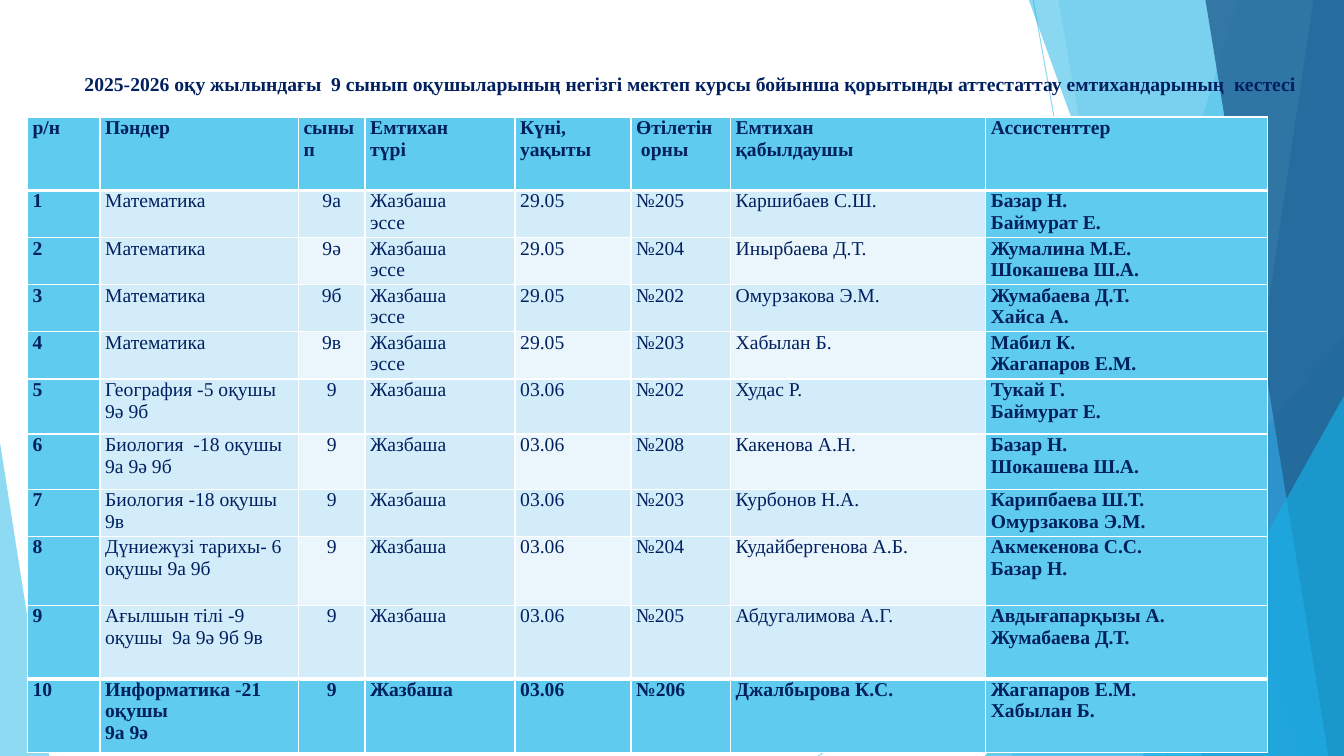
from lxml import etree
from pptx import Presentation
from pptx.dml.color import RGBColor
from pptx.enum import shapes, text
from pptx.oxml.ns import qn
from pptx.util import Cm, Pt

WHITE = RGBColor(0xFF, 0xFF, 0xFF)
NAVY = RGBColor(0x00, 0x20, 0x60)
SKY = RGBColor(0x5F, 0xCB, 0xEF)
CYAN = RGBColor(0x17, 0xB0, 0xE4)
BLUE = RGBColor(0x2E, 0x83, 0xC3)
DEEP = RGBColor(0x22, 0x62, 0x92)
PALE = RGBColor(0xD2, 0xEC, 0xF9)
PALER = RGBColor(0xEA, 0xF6, 0xFC)

FONT = "Times New Roman"
WIDTH, HEIGHT = 33.87, 19.05
TITLE = ("2025-2026 оқу жылындағы  9 сынып оқушыларының негізгі мектеп курсы "
         "бойынша қорытынды аттестаттау емтихандарының  кестесі")
COLUMNS = [1.83, 5, 1.68, 3.78, 2.92, 2.51, 6.43, 7.11]
ROWS = [1.85] + [1.15] * 4 + [1.39] * 2 + [1.15, 1.74, 1.85, 1.85]
HEADER = ("р/н", "Пәндер", "сынып", "Емтихан\nтүрі", "Күні, уақыты",
          "Өтілетін\n орны", "Емтихан\nқабылдаушы", "Ассистенттер")
ESSAY = "Жазбаша\nэссе"
WRITTEN = "Жазбаша"
EXAMS = [
    ("Математика", "9а", ESSAY, "29.05", "№205", "Каршибаев С.Ш.",
     "Базар Н.\nБаймурат Е."),
    ("Математика", "9ә", ESSAY, "29.05", "№204", "Инырбаева Д.Т.",
     "Жумалина М.Е.\nШокашева Ш.А."),
    ("Математика", "9б", ESSAY, "29.05", "№202", "Омурзакова Э.М.",
     "Жумабаева Д.Т.\nХайса А."),
    ("Математика", "9в", ESSAY, "29.05", "№203", "Хабылан Б.",
     "Мабил К.\nЖагапаров Е.М."),
    ("География -5 оқушы\n9ә 9б", "9", WRITTEN, "03.06", "№202", "Худас Р.",
     "Тукай Г.\nБаймурат Е."),
    ("Биология  -18 оқушы\n9а 9ә 9б", "9", WRITTEN, "03.06", "№208",
     "Какенова А.Н.", "Базар Н.\nШокашева Ш.А."),
    ("Биология -18 оқушы 9в", "9", WRITTEN, "03.06", "№203", "Курбонов Н.А.",
     "Карипбаева Ш.Т.\nОмурзакова Э.М."),
    ("Дүниежүзі тарихы- 6 оқушы 9а 9б", "9", WRITTEN, "03.06", "№204",
     "Кудайбергенова А.Б.", "Акмекенова С.С.\nБазар Н."),
    ("Ағылшын тілі -9 оқушы  9а 9ә 9б 9в", "9", WRITTEN, "03.06", "№205",
     "Абдугалимова А.Г.", "Авдығапарқызы А.\nЖумабаева Д.Т."),
    ("Информатика -21 оқушы\n9а 9ә", "9", WRITTEN, "03.06", "№206",
     "Джалбырова К.С.", "Жагапаров Е.М.\nХабылан Б."),
]


def write(tf, content, size=14, bold=False, color=NAVY, align=text.PP_ALIGN.LEFT):
    """Write each line of content as a formatted paragraph."""
    for i, line in enumerate(content.split("\n")):
        p = tf.add_paragraph() if i else tf.paragraphs[0]
        p.alignment = align
        r = p.add_run()
        r.text = line
        r.font.name, r.font.size, r.font.bold = FONT, Pt(size), bold
        r.font.color.rgb = color


def set_opacity(element, percent):
    """Make every RGB colour inside the element partly transparent."""
    for color in list(element.iter(qn("a:srgbClr"))):
        etree.SubElement(color, qn("a:alpha"), val=str(percent * 1000))


def paint(sp, color, opacity):
    """Give a shape a translucent fill with no outline or shadow."""
    sp.shadow.inherit = False
    sp.fill.solid()
    sp.fill.fore_color.rgb = color
    sp.line.fill.background()
    set_opacity(sp.fill._xPr, opacity)


def add_ray(slide, x1, y1, x2, y2):
    """Draw a thin translucent line."""
    line = slide.shapes.add_connector(
        shapes.MSO_CONNECTOR.STRAIGHT, Cm(x1), Cm(y1), Cm(x2), Cm(y2))
    line.line.color.rgb = SKY
    line.line.width = Pt(0.75)
    sp_pr = line._element.spPr
    set_opacity(sp_pr, 70)
    etree.SubElement(sp_pr, qn("a:effectLst"))


def add_facet(slide, top_x, bottom_x, color, opacity):
    """Fill the area between a slanted edge and the right side of the slide."""
    builder = slide.shapes.build_freeform(Cm(top_x), 0)
    builder.add_line_segments([(Cm(WIDTH), 0), (Cm(WIDTH), Cm(HEIGHT)),
                               (Cm(bottom_x), Cm(HEIGHT))])
    paint(builder.convert_to_shape(), color, opacity)


def add_triangle(slide, x, y, w, apex, color, opacity):
    """Draw a triangle standing on the bottom edge of the slide."""
    sp = slide.shapes.add_shape(shapes.MSO_SHAPE.ISOSCELES_TRIANGLE,
                                Cm(x), Cm(y), Cm(w), Cm(HEIGHT - y))
    sp.adjustments[0] = apex
    paint(sp, color, opacity)


def add_title(slide):
    """Add the heading above the table."""
    tf = slide.shapes.add_textbox(Cm(1.88), Cm(1.7), Cm(31.29), Cm(3.66)).text_frame
    tf.word_wrap = True
    write(tf, TITLE, bold=True)


def set_borders(cell, top, bottom):
    """Draw white cell borders with the given top and bottom widths."""
    for side, width in (("L", 1), ("R", 1), ("T", top), ("B", bottom)):
        ln = etree.SubElement(cell._tc.get_or_add_tcPr(), qn(f"a:ln{side}"),
                              w=str(Pt(width)))
        fill = etree.SubElement(ln, qn("a:solidFill"))
        etree.SubElement(fill, qn("a:srgbClr"), val=str(WHITE))


def add_schedule(slide):
    """Add the exam table."""
    records = [HEADER] + [(str(n), *exam) for n, exam in enumerate(EXAMS, 1)]
    last_row, last_col = len(ROWS) - 1, len(COLUMNS) - 1
    table = slide.shapes.add_table(
        len(ROWS), len(COLUMNS), Cm(0.69), Cm(2.95),
        Cm(sum(COLUMNS)), Cm(sum(ROWS))).table
    table.horz_banding = False
    for column, width in zip(table.columns, COLUMNS):
        column.width = Cm(width)
    for i, (row, height, record) in enumerate(zip(table.rows, ROWS, records)):
        row.height = Cm(height)
        for j, (cell, content) in enumerate(zip(row.cells, record)):
            strong = i in (0, last_row) or j in (0, last_col)
            pale = PALER if i % 2 == 0 and j % 2 == 0 else PALE
            set_borders(cell, top=3 if i in (1, last_row) else 1,
                        bottom=3 if i in (0, last_row - 1) else 1)
            cell.fill.solid()
            cell.fill.fore_color.rgb = SKY if strong else pale
            cell.margin_left = cell.margin_right = Cm(0.13)
            cell.margin_top = cell.margin_bottom = 0
            centred = i > 0 and j == 2
            write(cell.text_frame, content, bold=strong,
                  align=text.PP_ALIGN.CENTER if centred else text.PP_ALIGN.LEFT)


def main():
    """Build and save the slide."""
    prs = Presentation()
    prs.slide_width, prs.slide_height = Cm(WIDTH), Cm(HEIGHT)
    slide = prs.slides.add_slide(prs.slide_layouts[6])
    add_ray(slide, 26.04, 0, 29.41, HEIGHT)
    add_ray(slide, WIDTH, 10.24, 20.62, HEIGHT)
    add_facet(slide, 31.19, 25.5, SKY, 36)
    add_facet(slide, 26.67, 30.02, SKY, 20)
    add_triangle(slide, 24.82, 8.46, 9.05, 1, CYAN, 66)
    add_facet(slide, 25.93, 32.79, CYAN, 50)
    add_facet(slide, 33.1, 30.28, BLUE, 70)
    add_facet(slide, 30.38, 33.48, DEEP, 80)
    add_triangle(slide, 28.8, 9.98, 5.07, 1, CYAN, 66)
    add_triangle(slide, 0, 11.15, 1.24, 0, SKY, 70)
    add_title(slide)
    add_schedule(slide)
    prs.save("out.pptx")


if __name__ == "__main__":
    main()
